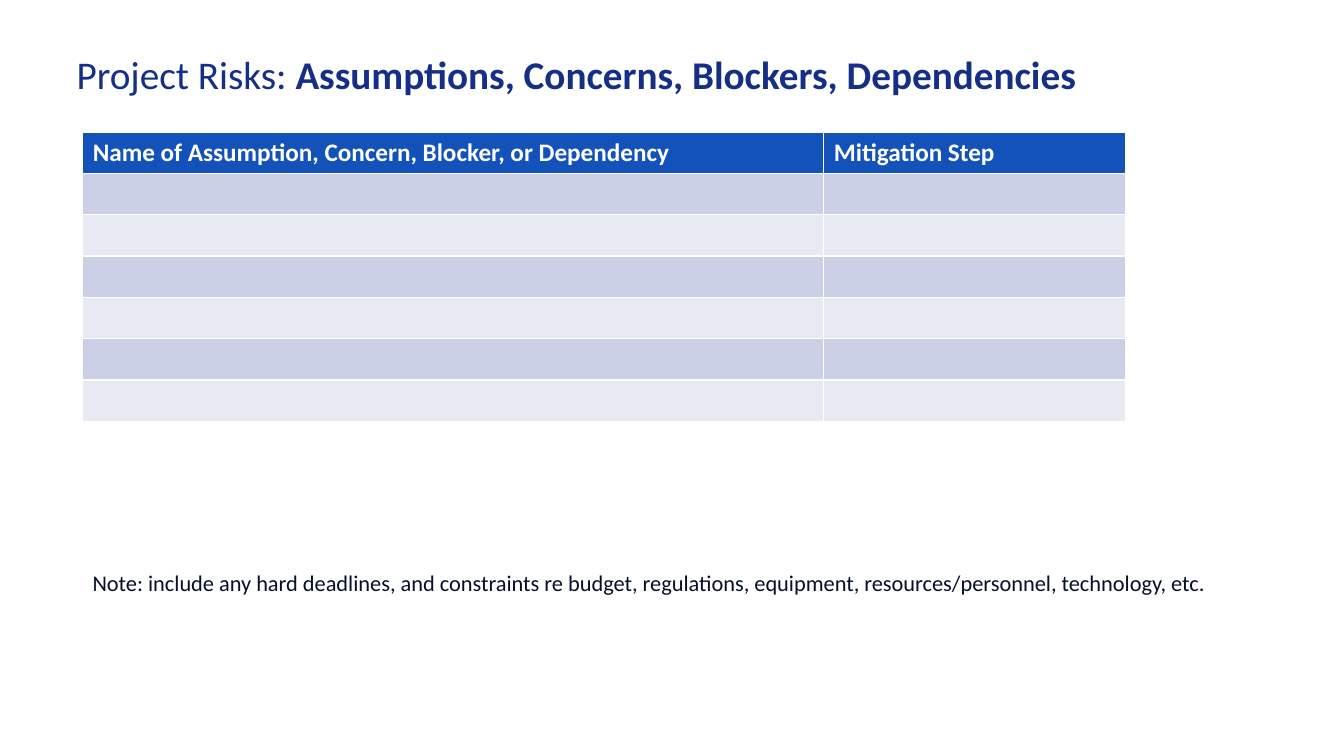
from pptx import Presentation
from pptx.dml.color import RGBColor
from pptx.enum.text import MSO_ANCHOR, MSO_AUTO_SIZE, PP_ALIGN
from pptx.util import Inches, Pt

NAVY = RGBColor(0x15, 0x2F, 0x86)
BLUE = RGBColor(0x13, 0x51, 0xBB)
INK = RGBColor(0x06, 0x0F, 0x2A)
WHITE = RGBColor(0xFF, 0xFF, 0xFF)
BANDS = [RGBColor(0xCC, 0xD0, 0xE7), RGBColor(0xE7, 0xE9, 0xF3)]


def add_text(paragraph, content, size, color, bold=False):
    run = paragraph.add_run()
    run.text = content
    run.font.name = "Calibri"
    run.font.size = Pt(size)
    run.font.color.rgb = color
    run.font.bold = bold


presentation = Presentation()
presentation.slide_width = Inches(13.33)
presentation.slide_height = Inches(7.5)
slide = presentation.slides.add_slide(presentation.slide_layouts[5])

title = slide.shapes.title
title.left, title.top = Inches(0.66), Inches(0.39)
title.width, title.height = Inches(11.15), Inches(0.74)
title.text_frame.vertical_anchor = MSO_ANCHOR.MIDDLE
title.text_frame.auto_size = MSO_AUTO_SIZE.NONE
paragraph = title.text_frame.paragraphs[0]
paragraph.alignment = PP_ALIGN.LEFT
paragraph.line_spacing = 0.9
add_text(paragraph, "Project Risks: ", size=28, color=NAVY)
add_text(paragraph, "Assumptions, Concerns, Blockers, Dependencies", size=28, color=NAVY, bold=True)

columns = [
    ("Name of Assumption, Concern, Blocker, or Dependency", 7.35),
    ("Mitigation Step", 2.99),
]
row_count = 7
row_height = Inches(0.41)
table = slide.shapes.add_table(
    row_count, len(columns), Inches(0.82), Inches(1.31), Inches(10.34), row_height * row_count
).table
for row in table.rows:
    row.height = row_height
for column_index, (heading, width) in enumerate(columns):
    table.columns[column_index].width = Inches(width)
    for row_index in range(row_count):
        cell = table.cell(row_index, column_index)
        cell.fill.solid()
        cell.fill.fore_color.rgb = BANDS[(row_index - 1) % 2] if row_index else BLUE
    add_text(table.cell(0, column_index).text_frame.paragraphs[0], heading, size=18, color=WHITE, bold=True)

note = slide.shapes.add_textbox(Inches(0.82), Inches(5.6), Inches(11.53), Inches(0.37))
note.text_frame.word_wrap = True
note.text_frame.auto_size = MSO_AUTO_SIZE.SHAPE_TO_FIT_TEXT
add_text(
    note.text_frame.paragraphs[0],
    "Note: include any hard deadlines, and constraints re budget, regulations, equipment, "
    "resources/personnel, technology, etc.",
    size=16,
    color=INK,
)

presentation.save("out.pptx")
